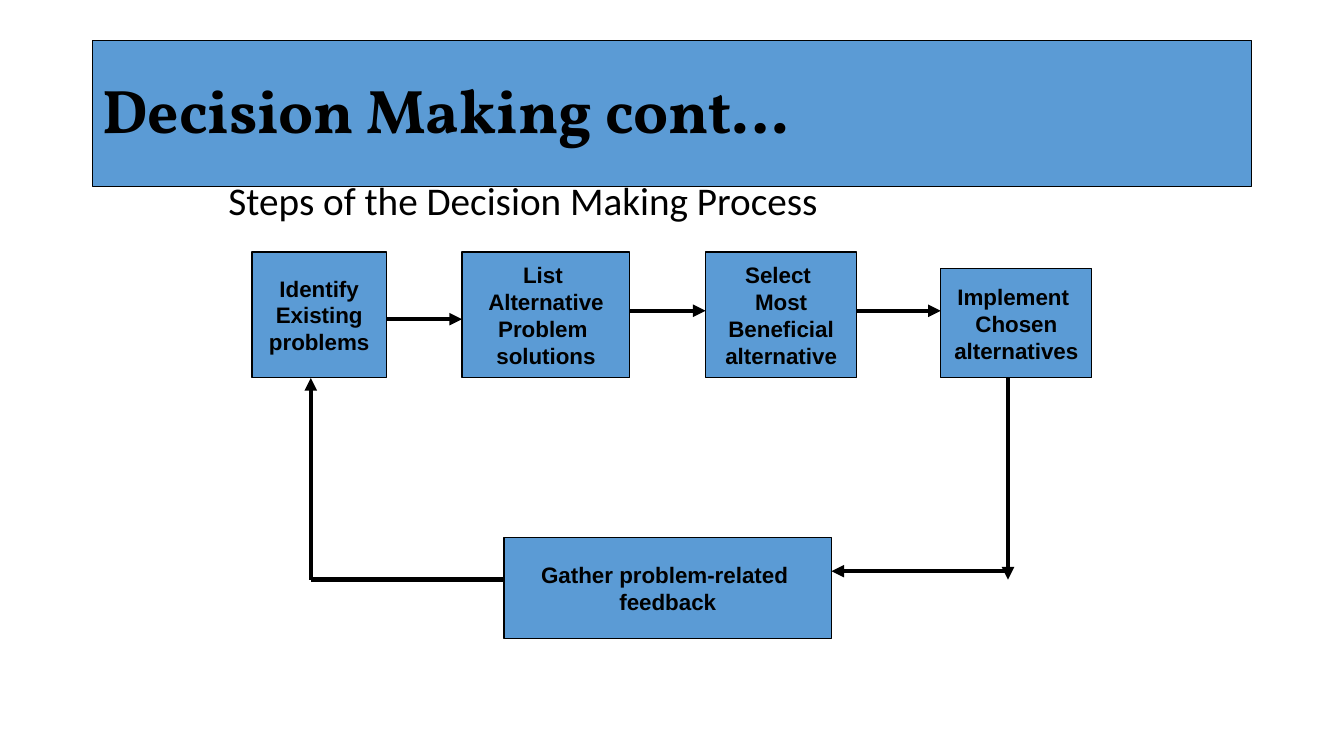
"""Build a slide showing the decision making process as a feedback loop."""
import pptx
import pptx.dml.color
import pptx.enum.shapes
import pptx.enum.text
import pptx.oxml
import pptx.oxml.ns
import pptx.util
from dataclasses import dataclass

Pt = pptx.util.Pt
Align = pptx.enum.text.PP_ALIGN
Anchor = pptx.enum.text.MSO_ANCHOR

TITLE = "Decision Making cont…"
SUBTITLE = "Steps of the Decision Making Process"
STEPS = {
    "identify": ("Identify\nExisting\nproblems", (180, 180, 96, 90)),
    "list": ("List \nAlternative\nProblem \nsolutions", (330, 180, 120, 90)),
    "select": ("Select \nMost\nBeneficial\nalternative", (504, 180, 108, 90)),
    "implement": ("Implement \nChosen\nalternatives", (672, 192, 108, 78)),
    "feedback": ("Gather problem-related \nfeedback", (360, 384, 234, 72)),
}
FORWARD = [("identify", "list", 228), ("list", "select", 222), ("select", "implement", 222)]
TITLE_AREA = (66, 28.8, 828, 104.4)
BODY_AREA = (156, 126, 648, 396)
RETURN_X, DOWN_X = 222, 720
ENTRY_Y, RETURN_Y = 408, 414


@dataclass(frozen=True)
class Theme:
    """Colours, fonts and sizes of the slide."""
    fill = pptx.dml.color.RGBColor.from_string("5B9BD5")
    ink = pptx.dml.color.RGBColor.from_string("000000")
    title = ("Vollkorn", 44, True)
    body = ("Calibri", 28, False)
    step = ("Arial", 16, True)
    outline = 0.75
    arrow = 3


def place(shape, area):
    """Move and size a shape, in points."""
    shape.left, shape.top, shape.width, shape.height = map(Pt, area)


def write(shape, text, style, align, anchor, wrap=True, spacing=None):
    """Fill a shape with evenly styled text."""
    frame = shape.text_frame
    frame.text = text
    frame.auto_size = pptx.enum.text.MSO_AUTO_SIZE.NONE
    frame.word_wrap = wrap
    frame.vertical_anchor = anchor
    for para in frame.paragraphs:
        para.alignment = align
        para.line_spacing = spacing
        for span in para.runs:
            span.font.name, size, span.font.bold = style
            span.font.size = Pt(size)
            span.font.color.rgb = Theme.ink


def paint(shape):
    """Give a shape the blue fill and thin outline."""
    shape.fill.solid()
    shape.fill.fore_color.rgb = Theme.fill
    shape.line.color.rgb = Theme.ink
    shape.line.width = Pt(Theme.outline)


def connect(page, start, end, arrow=True):
    """Draw a straight line, with an arrowhead at its end if wanted."""
    line = page.shapes.add_connector(
        pptx.enum.shapes.MSO_CONNECTOR.STRAIGHT, *map(Pt, start + end))
    line.line.color.rgb = Theme.ink
    line.line.width = Pt(Theme.arrow)
    if arrow:
        head = pptx.oxml.parse_xml(
            f'<a:tailEnd {pptx.oxml.ns.nsdecls("a")} type="triangle"/>')
        line.line._get_or_add_ln().append(head)
    line._element.spPr.append(
        pptx.oxml.parse_xml(f'<a:effectLst {pptx.oxml.ns.nsdecls("a")}/>'))


def add_headings(page):
    """Fill the title and body placeholders."""
    title, body = page.placeholders
    place(title, TITLE_AREA)
    paint(title)
    write(title, TITLE, Theme.title, Align.LEFT, Anchor.MIDDLE, spacing=0.9)
    place(body, BODY_AREA)
    write(body, SUBTITLE, Theme.body, Align.LEFT, Anchor.TOP, spacing=0.9)
    para = body.text_frame.paragraphs[0]
    para.space_before = Pt(10)
    settings = para._p.get_or_add_pPr()
    settings.set("marL", str(Pt(18)))
    settings.set("indent", str(Pt(-18)))
    settings.append(pptx.oxml.parse_xml(f'<a:buNone {pptx.oxml.ns.nsdecls("a")}/>'))


def add_steps(page):
    """Draw the step boxes."""
    for text, area in STEPS.values():
        box = page.shapes.add_shape(
            pptx.enum.shapes.MSO_SHAPE.RECTANGLE, *map(Pt, area))
        box.shadow.inherit = False
        paint(box)
        write(box, text, Theme.step, Align.CENTER, Anchor.MIDDLE, wrap=False)


def add_arrows(page):
    """Link the steps forward and back through the feedback box."""
    areas = {name: area for name, (text, area) in STEPS.items()}
    right = {name: area[0] + area[2] for name, area in areas.items()}
    bottom = areas["identify"][1] + areas["identify"][3]
    for source, target, y in FORWARD:
        connect(page, (right[source], y), (areas[target][0], y))
    connect(page, (DOWN_X, ENTRY_Y), (right["feedback"], ENTRY_Y))
    connect(page, (DOWN_X, bottom), (DOWN_X, RETURN_Y))
    connect(page, (areas["feedback"][0], RETURN_Y), (RETURN_X, RETURN_Y), arrow=False)
    connect(page, (RETURN_X, RETURN_Y), (RETURN_X, bottom))


def main():
    """Build and save the deck."""
    deck = pptx.Presentation()
    deck.slide_width, deck.slide_height = Pt(960), Pt(540)
    page = deck.slides.add_slide(deck.slide_layouts[1])
    add_headings(page)
    add_steps(page)
    add_arrows(page)
    deck.save("out.pptx")


if __name__ == "__main__":
    main()
